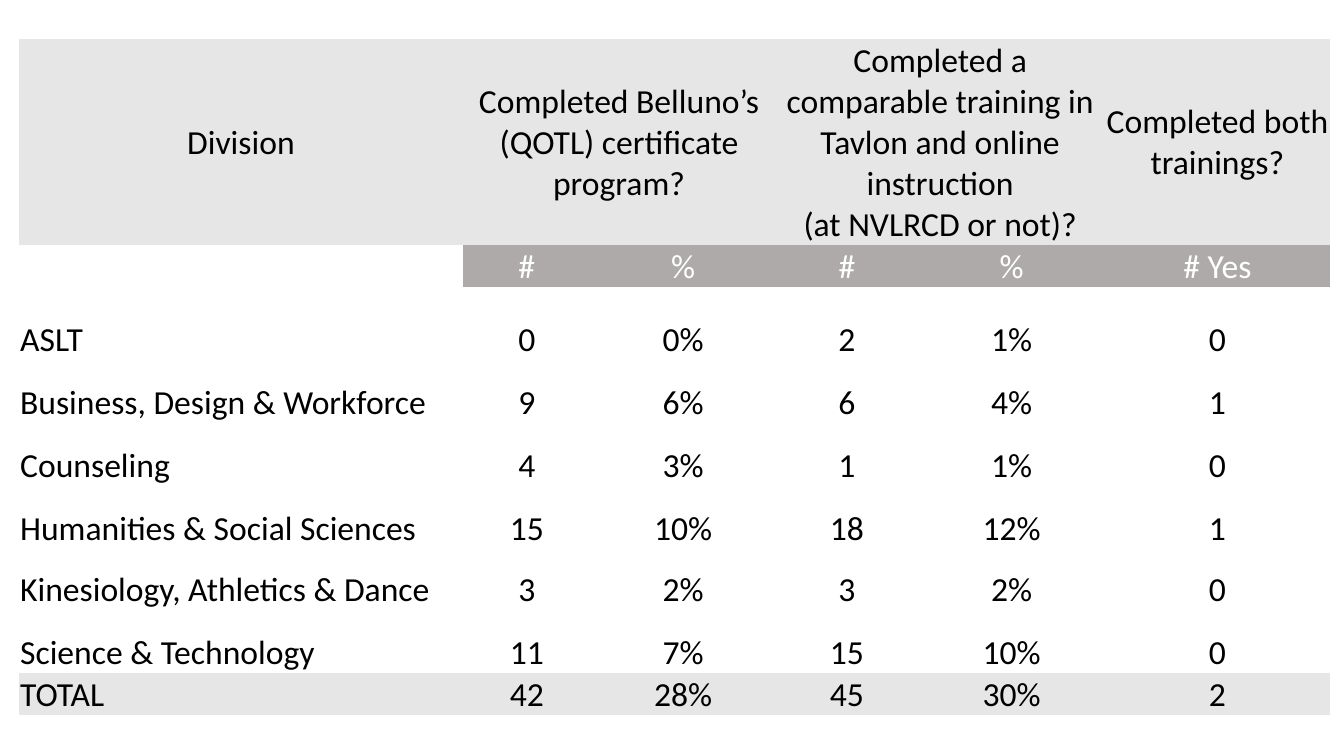
"""Build a slide with a table of online training completion by division."""
import dataclasses

import pptx
import pptx.dml.color
import pptx.enum.text
import pptx.util

HEADINGS = [
    (0, 1, "Division"),
    (1, 2, "Completed Belluno’s (QOTL) certificate program?"),
    (3, 2, "Completed a comparable training in Tavlon and online instruction\n(at NVLRCD or not)?"),
    (5, 1, "Completed both trainings?"),
]
UNITS = ("", "#", "%", "#", "%", "# Yes")
DIVISIONS = [
    ("ASLT", "0", "0%", "2", "1%", "0"),
    ("Business, Design & Workforce", "9", "6%", "6", "4%", "1"),
    ("Counseling", "4", "3%", "1", "1%", "0"),
    ("Humanities & Social Sciences", "15", "10%", "18", "12%", "1"),
    ("Kinesiology, Athletics & Dance", "3", "2%", "3", "2%", "0"),
    ("Science & Technology", "11", "7%", "15", "10%", "0"),
]
TOTAL = ("TOTAL", "42", "28%", "45", "30%", "2")
COLUMN_WIDTHS = (4.4, 1.27, 1.83, 1.42, 1.85, 2.23)
ROW_HEIGHTS = (1.33, 0.33, 0.73, 0.62, 0.63, 0.62, 0.61, 0.62, 0.32)
LEFT, TOP, WIDTH, HEIGHT = 0.19, 0.39, 13, 6.65
CELL_INSET = 0.01
PLAIN_TABLE_STYLE = "{2D5ABB26-0587-4C30-8999-92F81FD0307C}"

Inches = pptx.util.Inches
Align = pptx.enum.text.PP_ALIGN
Anchor = pptx.enum.text.MSO_ANCHOR


@dataclasses.dataclass(frozen=True)
class Theme:
    """Colours and type of the table."""
    font: str = "Calibri"
    size: int = 24
    ink: str = "000000"
    light_ink: str = "FFFFFF"
    band: str = "E7E6E6"
    unit_band: str = "AEAAAA"


THEME = Theme()


def color(value):
    """Turn a hex string into a colour."""
    return pptx.dml.color.RGBColor.from_string(value)


def fill_cell(cell, text, fill=None, ink=THEME.ink, align=Align.CENTER, anchor=Anchor.BOTTOM):
    """Write one cell and give it its look."""
    cell.margin_left = cell.margin_right = cell.margin_top = Inches(CELL_INSET)
    cell.margin_bottom = 0
    cell.vertical_anchor = anchor
    if fill:
        cell.fill.solid()
        cell.fill.fore_color.rgb = color(fill)
    else:
        cell.fill.background()
    para = cell.text_frame.paragraphs[0]
    para.alignment = align
    para.font.size = pptx.util.Pt(THEME.size)
    for number, line in enumerate(text.split("\n")):
        if number:
            para.add_line_break()
        if line:
            span = para.add_run()
            span.text = line
            span.font.name = THEME.font
            span.font.size = pptx.util.Pt(THEME.size)
            span.font.color.rgb = color(ink)


def add_training_table(page):
    """Add the table with its headings, units, divisions and total."""
    frame = page.shapes.add_table(
        len(ROW_HEIGHTS), len(COLUMN_WIDTHS),
        Inches(LEFT), Inches(TOP), Inches(WIDTH), Inches(HEIGHT))
    table = frame.table
    table.first_row = table.horz_banding = False
    frame.element.xpath(".//a:tableStyleId")[0].text = PLAIN_TABLE_STYLE
    for column, width in zip(table.columns, COLUMN_WIDTHS):
        column.width = Inches(width)
    for row, height in zip(table.rows, ROW_HEIGHTS):
        row.height = Inches(height)
    frame.height = Inches(HEIGHT)

    for column, columns_wide, text in HEADINGS:
        cell = table.cell(0, column)
        if columns_wide > 1:
            cell.merge(table.cell(0, column + columns_wide - 1))
        fill_cell(cell, text, THEME.band, anchor=Anchor.MIDDLE)
    for column, text in enumerate(UNITS):
        fill_cell(table.cell(1, column), text, THEME.unit_band if text else None,
                  THEME.light_ink, anchor=Anchor.MIDDLE)
    for row, values in enumerate(DIVISIONS + [TOTAL], start=2):
        fill = THEME.band if values is TOTAL else None
        for column, text in enumerate(values):
            align = Align.CENTER if column else Align.LEFT
            fill_cell(table.cell(row, column), text, fill, align=align)


def main():
    """Make the deck and save it."""
    deck = pptx.Presentation()
    deck.slide_width, deck.slide_height = Inches(13.33), Inches(7.5)
    page = deck.slides.add_slide(deck.slide_layouts[6])
    add_training_table(page)
    deck.save("out.pptx")


if __name__ == "__main__":
    main()
